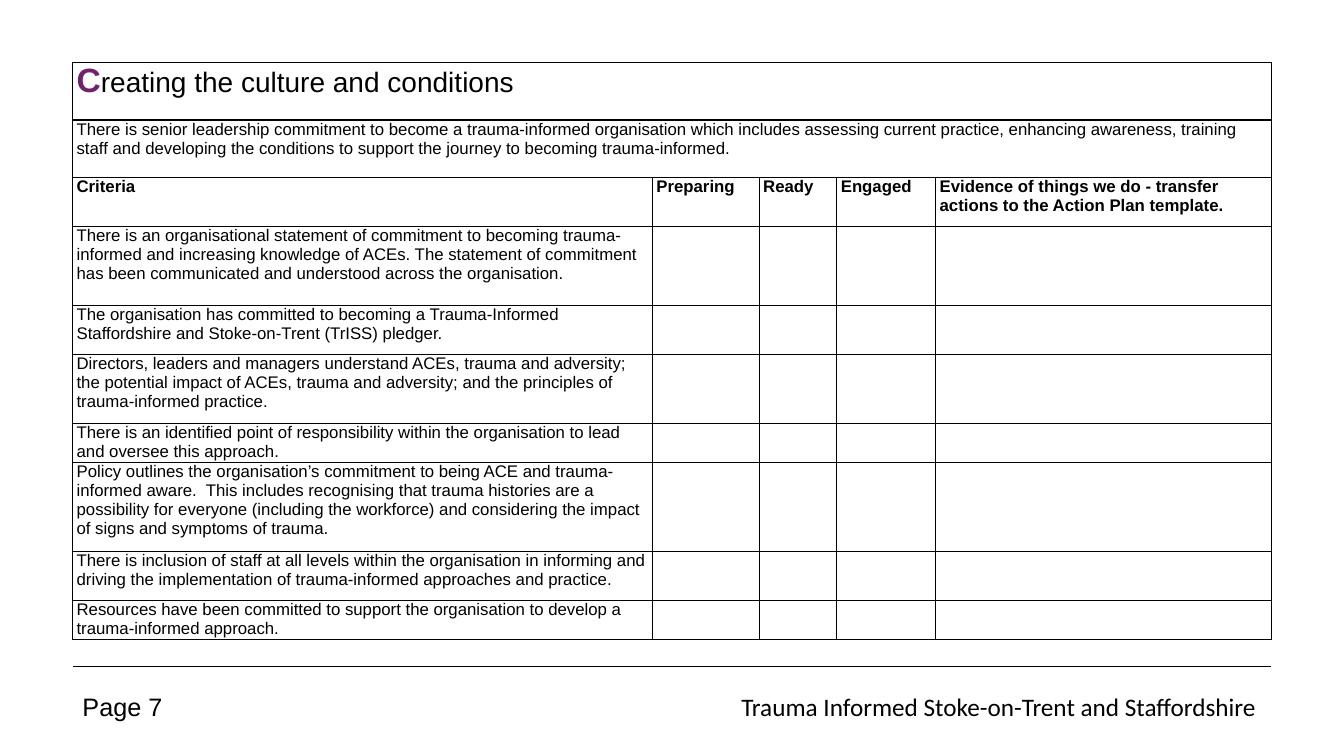
"""Build the culture and conditions self-assessment slide."""
import dataclasses
import typing

import lxml.etree
import pptx
import pptx.dml.color
import pptx.enum.shapes
import pptx.enum.text
import pptx.oxml
import pptx.oxml.ns
import pptx.util

Inches = pptx.util.Inches
Align = pptx.enum.text.PP_ALIGN
BLACK = "000000"
PURPLE = "6F2171"
LEFT, TABLE_TOP, RULE_TOP, FOOTER_TOP = 0.72, 0.62, 6.61, 6.81
COLUMN_WIDTHS = (5.75, 1.06, 0.77, 0.98, 3.33)
RIGHT = LEFT + sum(COLUMN_WIDTHS)
CELL_FORMAT = {
    "margin_left": Inches(0.04),
    "margin_right": Inches(0.04),
    "margin_top": 0,
    "margin_bottom": 0,
}


@dataclasses.dataclass(frozen=True)
class TextPiece:
    text: str
    size: float = 12
    bold: bool = False
    color: str = BLACK
    font: str = "Arial"


@dataclasses.dataclass(frozen=True)
class TableRow:
    height: float
    cells: tuple[tuple[TextPiece, ...], ...]
    merged: bool = False


@dataclasses.dataclass(frozen=True)
class FooterText:
    left: float
    width: float
    piece: TextPiece
    alignment: Align


def criterion(height: float, text: str) -> TableRow:
    """Return a row with its criterion in the first column."""
    return TableRow(height, ((TextPiece(text),),))


HEADINGS = (
    "Criteria",
    "Preparing",
    "Ready",
    "Engaged",
    "Evidence of things we do - transfer actions to the Action Plan template.",
)
ROWS = (
    TableRow(0.57, ((
        TextPiece("C", 24, True, PURPLE),
        TextPiece("reating the culture and conditions", 20),
    ),), True),
    TableRow(0.57, ((TextPiece(
        "There is senior leadership commitment to become a trauma-informed organisation "
        "which includes assessing current practice, enhancing awareness, training staff and "
        "developing the conditions to support the journey to becoming trauma-informed."
    ),),), True),
    TableRow(0.49, tuple((TextPiece(heading, bold=True),) for heading in HEADINGS)),
    criterion(0.78, "There is an organisational statement of commitment to becoming "
              "trauma-informed and increasing knowledge of ACEs. The statement of commitment "
              "has been communicated and understood across the organisation."),
    criterion(0.49, "The organisation has committed to becoming a Trauma-Informed "
              "Staffordshire and Stoke-on-Trent (TrISS) pledger."),
    criterion(0.68, "Directors, leaders and managers understand ACEs, trauma and adversity; "
              "the potential impact of ACEs, trauma and adversity; and the principles of "
              "trauma-informed practice."),
    criterion(0.39, "There is an identified point of responsibility within the organisation "
              "to lead and oversee this approach."),
    criterion(0.88, "Policy outlines the organisation’s commitment to being ACE and "
              "trauma-informed aware.  This includes recognising that trauma histories are a "
              "possibility for everyone (including the workforce) and considering the impact "
              "of signs and symptoms of trauma."),
    criterion(0.49, "There is inclusion of staff at all levels within the organisation in "
              "informing and driving the implementation of trauma-informed approaches and "
              "practice."),
    criterion(0.39, "Resources have been committed to support the organisation to develop a "
              "trauma-informed approach."),
)
FOOTERS = (
    FooterText(LEFT, 1.2, TextPiece("Page 7", 18), Align.LEFT),
    FooterText(RIGHT - 5.38, 5.38, TextPiece(
        "Trauma Informed Stoke-on-Trent and Staffordshire ", 18, font="Calibri"
    ), Align.RIGHT),
)


def rgb(color: str) -> pptx.dml.color.RGBColor:
    """Convert a hex string to a colour."""
    return pptx.dml.color.RGBColor.from_string(color)


def apply_format(target: typing.Any, values: dict[str, typing.Any]) -> None:
    """Set each named attribute on the target."""
    for name, value in values.items():
        setattr(target, name, value)


def write_pieces(paragraph: typing.Any, pieces: tuple[TextPiece, ...]) -> None:
    """Add formatted runs to a paragraph."""
    for piece in pieces:
        run = paragraph.add_run()
        run.text = piece.text
        apply_format(run.font, {
            "name": piece.font,
            "size": pptx.util.Pt(piece.size),
            "bold": piece.bold,
        })
        run.font.color.rgb = rgb(piece.color)


def format_cell(cell: typing.Any) -> None:
    """Give a cell its margins, black borders and no fill."""
    apply_format(cell, CELL_FORMAT)
    properties = cell._tc.get_or_add_tcPr()
    for side in ("lnL", "lnR", "lnT", "lnB"):
        properties.append(pptx.oxml.parse_xml(
            f'<a:{side} {pptx.oxml.ns.nsdecls("a")} w="{pptx.util.Pt(1)}">'
            f'<a:solidFill><a:srgbClr val="{BLACK}"/></a:solidFill></a:{side}>'
        ))
    cell.fill.background()


def add_criteria_table(slide: typing.Any) -> None:
    """Add the table of criteria."""
    height = sum(row.height for row in ROWS)
    table = slide.shapes.add_table(
        len(ROWS), len(COLUMN_WIDTHS), Inches(LEFT), Inches(TABLE_TOP),
        Inches(RIGHT - LEFT), Inches(height),
    ).table
    apply_format(table, {"first_row": False, "horz_banding": False})
    for column, width in zip(table.columns, COLUMN_WIDTHS):
        column.width = Inches(width)
    for row_index, row in enumerate(ROWS):
        table.rows[row_index].height = Inches(row.height)
        for column_index in range(len(COLUMN_WIDTHS)):
            format_cell(table.cell(row_index, column_index))
        for column_index, pieces in enumerate(row.cells):
            cell = table.cell(row_index, column_index)
            write_pieces(cell.text_frame.paragraphs[0], pieces)
        if row.merged:
            table.cell(row_index, 0).merge(table.cell(row_index, len(COLUMN_WIDTHS) - 1))


def add_footer_rule(slide: typing.Any) -> None:
    """Add the thin line above the footer."""
    rule = slide.shapes.add_connector(
        pptx.enum.shapes.MSO_CONNECTOR.STRAIGHT,
        Inches(LEFT), Inches(RULE_TOP), Inches(RIGHT), Inches(RULE_TOP),
    )
    rule.line.color.rgb = rgb(BLACK)
    rule.line.width = pptx.util.Pt(0.5)
    lxml.etree.SubElement(rule._element.spPr, pptx.oxml.ns.qn("a:effectLst"))


def add_footer_text(slide: typing.Any, footer: FooterText) -> None:
    """Add one footer text box."""
    frame = slide.shapes.add_textbox(
        Inches(footer.left), Inches(FOOTER_TOP), Inches(footer.width), Inches(0.4)
    ).text_frame
    apply_format(frame, {
        "word_wrap": True,
        "auto_size": pptx.enum.text.MSO_AUTO_SIZE.SHAPE_TO_FIT_TEXT,
    })
    frame.paragraphs[0].alignment = footer.alignment
    write_pieces(frame.paragraphs[0], (footer.piece,))


def main() -> None:
    """Create and save the presentation."""
    presentation = pptx.Presentation()
    apply_format(presentation, {"slide_width": Inches(13.33), "slide_height": Inches(7.5)})
    slide = presentation.slides.add_slide(presentation.slide_layouts[6])
    add_footer_rule(slide)
    add_criteria_table(slide)
    for footer in FOOTERS:
        add_footer_text(slide, footer)
    presentation.save("out.pptx")


if __name__ == "__main__":
    main()
